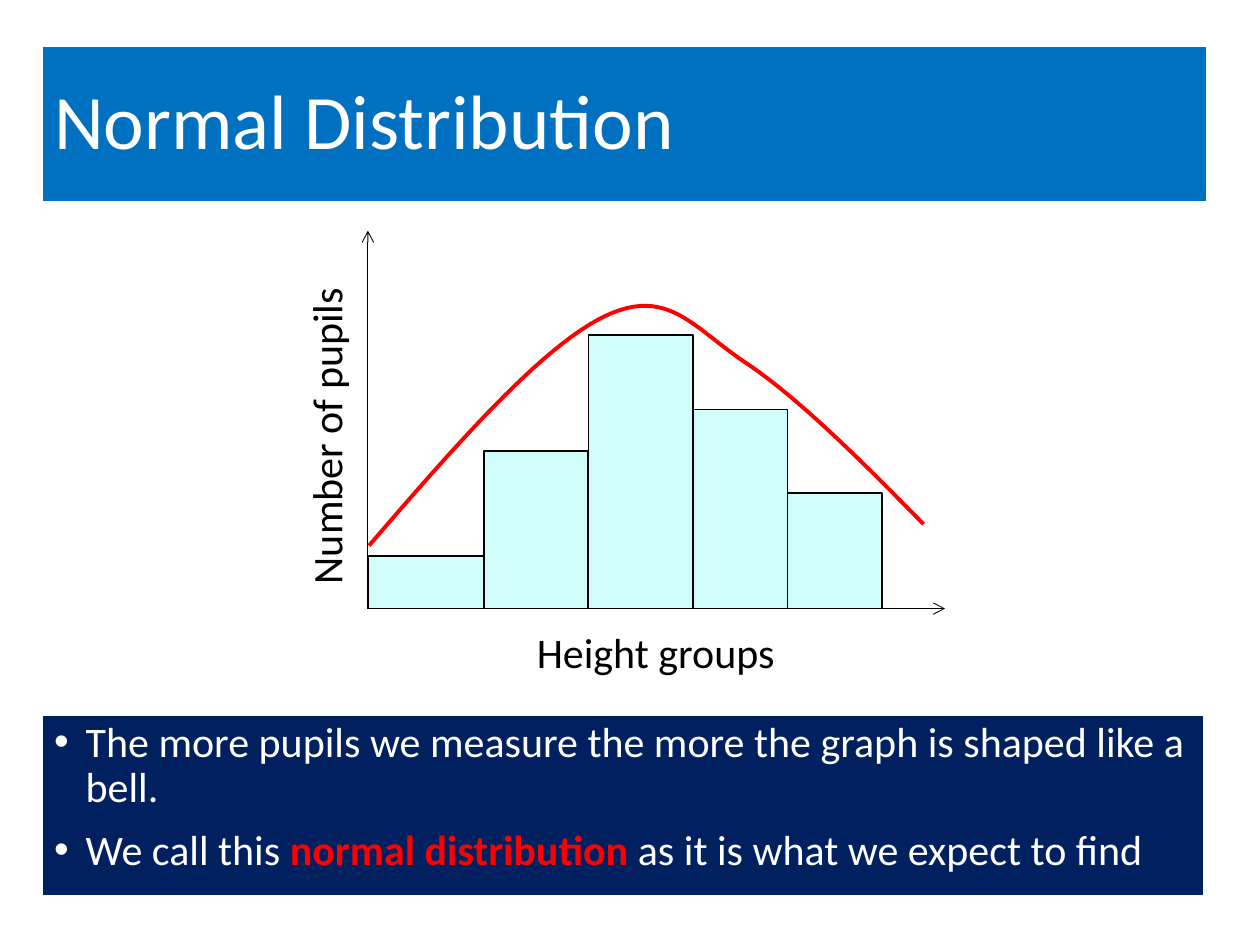
from lxml import etree
from pptx import Presentation
from pptx.dml.color import RGBColor
from pptx.enum.shapes import MSO_CONNECTOR, MSO_SHAPE
from pptx.enum.text import MSO_ANCHOR, MSO_AUTO_SIZE, PP_ALIGN
from pptx.oxml.ns import qn
from pptx.util import Inches, Pt

STRAIGHT = MSO_CONNECTOR.STRAIGHT
RECTANGLE = MSO_SHAPE.RECTANGLE
LEFT, CENTER = PP_ALIGN.LEFT, PP_ALIGN.CENTER
TOP, MIDDLE = MSO_ANCHOR.TOP, MSO_ANCHOR.MIDDLE
NO_FIT, GROW = MSO_AUTO_SIZE.NONE, MSO_AUTO_SIZE.SHAPE_TO_FIT_TEXT

COLORS = {
    "title": "0070C0",
    "panel": "002060",
    "light": "FFFFFF",
    "dark": "000000",
    "bar": "D0FCFA",
    "accent": "FF0000",
}
FONT = "Calibri"

ORIGIN_X, BASELINE = 2.92, 4.83
AXIS_TOP, AXIS_RIGHT = 1.83, 7.5
BARS = [(0.92, 0.42), (0.83, 1.25), (0.83, 2.17), (0.75, 1.58), (0.75, 0.92)]

# Bell curve: a start point, then two controls and an end per segment
CURVE_START = (2.93, 4.33)
CURVE_SEGMENTS = [
    ((3.61, 3.54), (4.3, 2.75), (4.8, 2.51)),
    ((5.3, 2.27), (5.5, 2.6), (5.92, 2.88)),
    ((6.34, 3.16), (6.84, 3.66), (7.33, 4.16)),
]
CURVE_STEPS = 24

STATEMENTS = [
    [("The more pupils we measure the more the graph is shaped like a bell.", False)],
    [("We call this ", False), ("normal distribution ", True),
     ("as it is what we expect to find", False)],
]


def rgb(name):
    return RGBColor.from_string(COLORS[name])


def apply(target, values):
    for attribute, value in values.items():
        setattr(target, attribute, value)


def place(shape, left, top, width, height):
    apply(shape, {"left": Inches(left), "top": Inches(top),
                  "width": Inches(width), "height": Inches(height)})


def style_line(line, color, width):
    line.color.rgb = rgb(color)
    line.width = Pt(width)


def style_box(shape, fill, line, width):
    shape.fill.solid()
    shape.fill.fore_color.rgb = rgb(fill)
    style_line(shape.line, line, width)


def add_run(paragraph, text, size, color, bold=False):
    run = paragraph.add_run()
    run.text = text
    apply(run.font, {"name": FONT, "size": Pt(size), "bold": bold})
    run.font.color.rgb = rgb(color)


def fill_title(title):
    place(title, 0.33, 0.36, 9.25, 1.25)
    style_box(title, "title", "light", 1.5)
    apply(title.text_frame, {"vertical_anchor": MIDDLE, "auto_size": NO_FIT})
    heading = title.text_frame.paragraphs[0]
    apply(heading, {"alignment": LEFT, "line_spacing": 0.9})
    add_run(heading, "Normal Distribution", 44, "light")


def set_bullet(paragraph):
    properties = paragraph._p.get_or_add_pPr()
    properties.set("marL", str(Inches(0.25)))
    properties.set("indent", str(-Inches(0.25)))
    etree.SubElement(properties, qn("a:buFont")).set("typeface", "Arial")
    etree.SubElement(properties, qn("a:buChar")).set("char", "•")


def fill_statements(body):
    place(body, 0.33, 5.67, 9.23, 1.44)
    style_box(body, "panel", "light", 1.5)
    frame = body.text_frame
    apply(frame, {"vertical_anchor": TOP, "auto_size": NO_FIT})
    for index, parts in enumerate(STATEMENTS):
        statement = frame.add_paragraph() if index else frame.paragraphs[0]
        apply(statement, {"line_spacing": 0.9, "space_before": Pt(10)})
        set_bullet(statement)
        for text, key_term in parts:
            add_run(statement, text, 24, "accent" if key_term else "light", key_term)


def add_axis(shapes, end_x, end_y):
    axis = shapes.add_connector(STRAIGHT, Inches(ORIGIN_X), Inches(BASELINE),
                                Inches(end_x), Inches(end_y))
    style_line(axis.line, "dark", 0.5)
    etree.SubElement(axis.line._get_or_add_ln(), qn("a:tailEnd")).set("type", "arrow")
    etree.SubElement(axis._element.spPr, qn("a:effectLst"))


def add_axis_label(shapes, text, left, top, rotation=0):
    label = shapes.add_textbox(Inches(left), Inches(top), Inches(2.75), Inches(0.5))
    label.rotation = rotation
    apply(label.text_frame, {"word_wrap": True, "auto_size": GROW})
    caption = label.text_frame.paragraphs[0]
    caption.alignment = CENTER
    add_run(caption, text, 24, "dark")


def add_bars(shapes):
    left = ORIGIN_X
    for width, height in BARS:
        bar = shapes.add_shape(RECTANGLE, Inches(left), Inches(BASELINE - height),
                               Inches(width), Inches(height))
        style_box(bar, "bar", "dark", 1)
        bar.shadow.inherit = False
        left += width


def bezier_point(corners, t):
    weights = ((1 - t) ** 3, 3 * t * (1 - t) ** 2, 3 * t ** 2 * (1 - t), t ** 3)
    return tuple(Inches(sum(w * corner[axis] for w, corner in zip(weights, corners)))
                 for axis in (0, 1))


def add_bell_curve(shapes):
    points, start = [], CURVE_START
    for segment in CURVE_SEGMENTS:
        corners = (start, *segment)
        points += [bezier_point(corners, step / CURVE_STEPS)
                   for step in range(1, CURVE_STEPS + 1)]
        start = segment[-1]
    builder = shapes.build_freeform(*(Inches(value) for value in CURVE_START))
    builder.add_line_segments(points, close=False)
    curve = builder.convert_to_shape()
    curve.fill.background()
    style_line(curve.line, "accent", 2.25)
    curve.shadow.inherit = False


def main():
    prs = Presentation()
    apply(prs, {"slide_width": Inches(10), "slide_height": Inches(7.5)})
    slide = prs.slides.add_slide(prs.slide_layouts[1])
    shapes = slide.shapes

    # Title and statements
    fill_title(shapes.title)
    fill_statements(slide.placeholders[1])

    # Axes with their labels
    add_axis(shapes, ORIGIN_X, AXIS_TOP)
    add_axis(shapes, AXIS_RIGHT, BASELINE)
    add_axis_label(shapes, "Number of pupils", 1.21, 3.21, rotation=270)
    add_axis_label(shapes, "Height groups", 3.83, 4.92)

    # Histogram and bell curve
    add_bars(shapes)
    add_bell_curve(shapes)

    prs.save("out.pptx")


if __name__ == "__main__":
    main()
